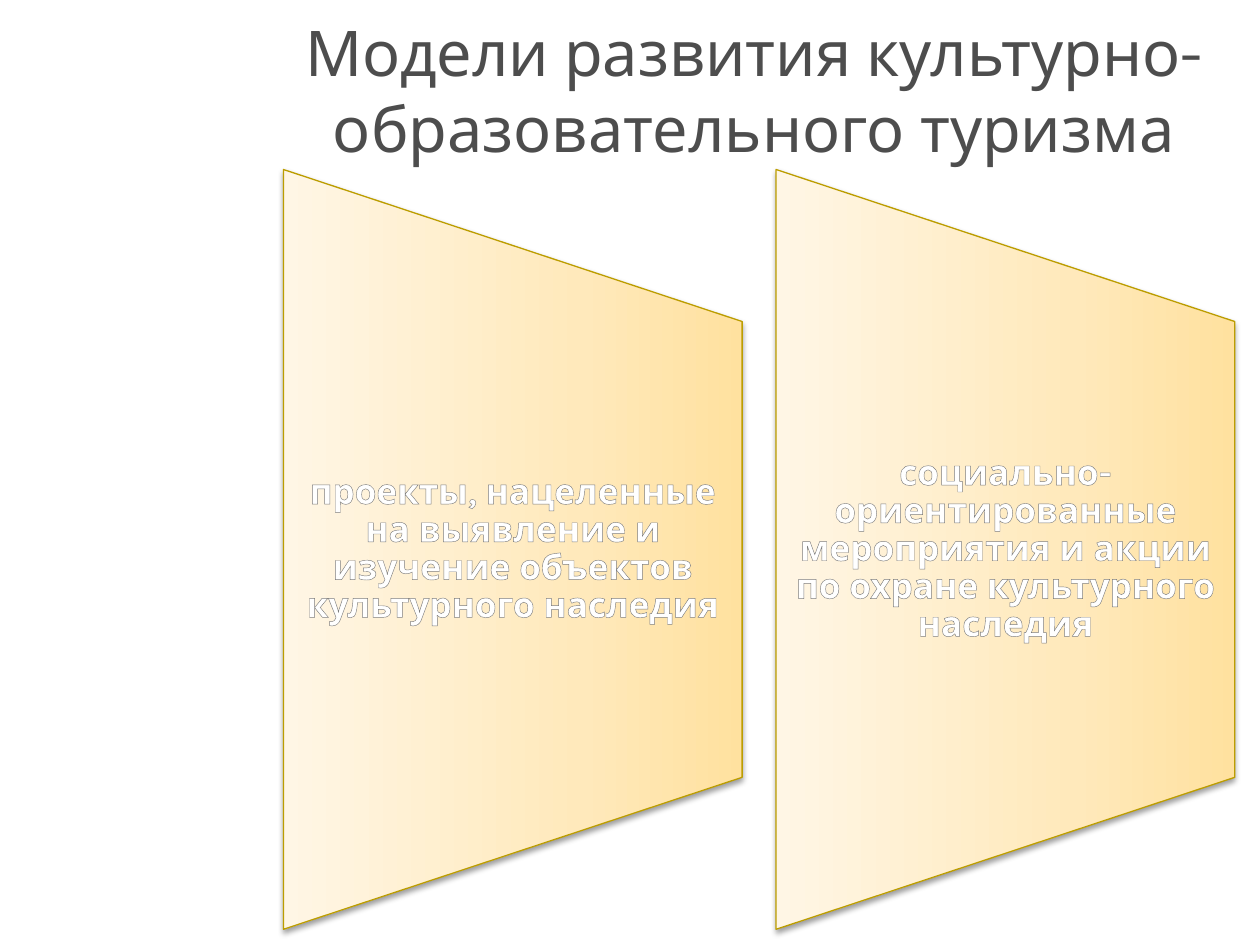
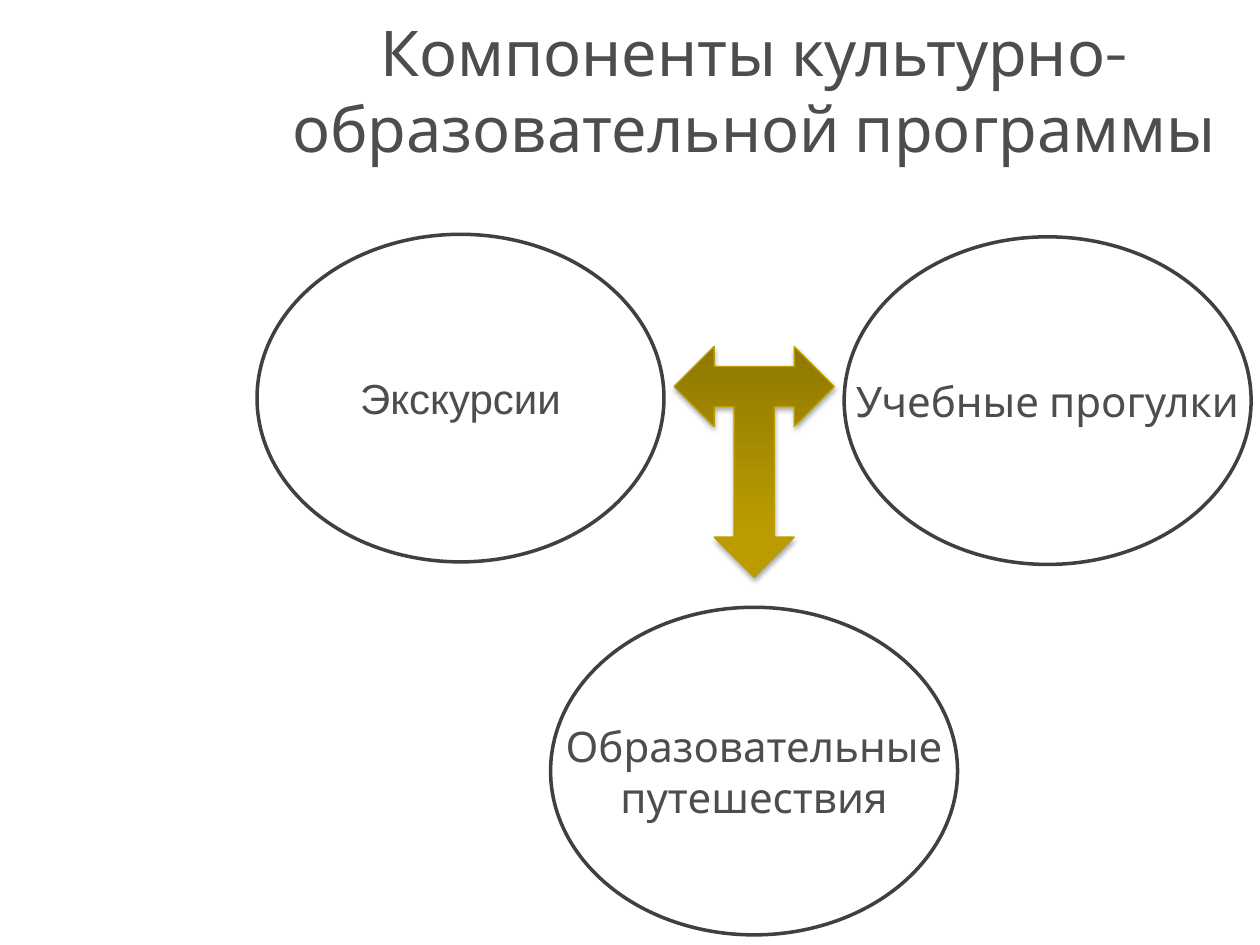
from dataclasses import dataclass
from typing import NamedTuple

from pptx import Presentation
from pptx.dml.color import RGBColor
from pptx.enum.shapes import MSO_SHAPE as Shape
from pptx.enum.text import MSO_ANCHOR as Anchor, PP_ALIGN as Align
from pptx.oxml import parse_xml
from pptx.oxml.ns import nsdecls, qn
from pptx.util import Inches, Pt


@dataclass(frozen=True)
class Theme:
    font: str = "Karla"
    plain: str = "Arial"
    ink: str = "4D4D4D"
    ring: str = "404040"
    paper: str = "FFFFFF"
    gold: str = "BC9D00"
    edge: str = "7D7D7D"
    title: int = 36
    label: int = 24
    body: int = 20
    cream: tuple = ((0, "FFE19F"), (35, "FFE9BB"), (100, "FFF6E5"))
    ochre: tuple = ((0, "8F7800"), (80, "BA9B00"), (100, "BB9C00"))
    shine: tuple = ((0, "FFFFFF"), (9, "FFFFFF"), (50, "7F7F7F"),
                    (79, "FFFFFF"), (100, "FFFFFF"))


class Box(NamedTuple):
    left: float
    top: float
    width: float
    height: float

    def place(self) -> list:
        return [Inches(side) for side in self]


class Panel(NamedTuple):
    left: float
    text: str


class Oval(NamedTuple):
    left: float
    top: float
    lines: tuple
    font: str


THEME = Theme()
HEAD = Box(2.05, 0.08, 7.87, 1.26)
PANELS = (
    Panel(2.25, "проекты, нацеленные на выявление и изучение объектов культурного наследия"),
    Panel(6.16, "социально-ориентированные мероприятия и акции по охране культурного наследия"),
)
OVALS = (
    Oval(6.7, 1.88, ("Учебные прогулки",), THEME.font),
    Oval(2.04, 1.86, ("Экскурсии",), THEME.plain),
    Oval(4.37, 4.82, ("Образовательные", "путешествия"), THEME.font),
)


def tint(code: str) -> RGBColor:
    return RGBColor.from_string(code)


def blend(stops: tuple, angle: int):
    marks = "".join(
        f'<a:gs pos="{pos * 1000}"><a:srgbClr val="{code}"/></a:gs>'
        for pos, code in stops)
    return parse_xml(
        f'<a:gradFill {nsdecls("a")} rotWithShape="1"><a:gsLst>{marks}</a:gsLst>'
        f'<a:lin ang="{angle * 60000}" scaled="0"/></a:gradFill>')


def write(frame, lines: tuple, size: int, color: str, font: str = THEME.font) -> list:
    frame.vertical_anchor = Anchor.MIDDLE
    runs = []
    for i, line in enumerate(lines):
        para = frame.add_paragraph() if i else frame.paragraphs[0]
        para.alignment = Align.CENTER
        run = para.add_run()
        run.text = line
        run.font.size = Pt(size)
        run.font.name = font
        run.font.color.rgb = tint(color)
        runs.append(run)
    return runs


def add_text(slide, box: Box, text: str, size: int, color: str):
    frame = slide.shapes.add_textbox(*box.place()).text_frame
    frame.word_wrap = True
    return frame, write(frame, (text,), size, color)[0]


def add_form(slide, kind, box: Box, line: str, width: float):
    form = slide.shapes.add_shape(kind, *box.place())
    form.shadow.inherit = False
    form.line.color.rgb = tint(line)
    form.line.width = Pt(width)
    return form


def add_gold(slide, kind, box: Box, turn: int, stops: tuple, alpha: int, drop: float) -> None:
    form = add_form(slide, kind, box, THEME.gold, 0.75)
    form.rotation = turn
    props = form._element.spPr
    props.find(qn("a:prstGeom")).addnext(blend(stops, 270))
    props.find(qn("a:effectLst")).append(parse_xml(
        f'<a:outerShdw {nsdecls("a")} blurRad="{Pt(3.1)}" dist="{Pt(drop)}" '
        f'dir="5400000" rotWithShape="0"><a:srgbClr val="000000">'
        f'<a:alpha val="{alpha * 1000}"/></a:srgbClr></a:outerShdw>'))


def add_panel(slide, panel: Panel) -> None:
    long, short = 6.03, 3.64
    mid = panel.left + short / 2
    add_gold(slide, Shape.FLOWCHART_MANUAL_OPERATION,
             Box(mid - long / 2, 2.54, long, short), 270, THEME.cream, 38, 1.6)
    frame, run = add_text(slide, Box(panel.left, 2.55, short, 3.62),
                          panel.text, THEME.body, THEME.paper)
    frame.margin_left = frame.margin_right = Inches(0.14)
    frame.margin_top = frame.margin_bottom = 0
    frame.paragraphs[0].line_spacing = 0.9
    run.font.bold = True
    props = run.font._element
    props.replace(props.find(qn("a:solidFill")), blend(THEME.shine, 90))
    props.insert(0, parse_xml(
        f'<a:ln {nsdecls("a")} w="{Pt(0.83)}"><a:solidFill>'
        f'<a:srgbClr val="{THEME.edge}"/></a:solidFill></a:ln>'))


def add_oval(slide, oval: Oval) -> None:
    form = add_form(slide, Shape.OVAL, Box(oval.left, oval.top, 3.23, 2.6), THEME.ring, 2)
    form.fill.solid()
    form.fill.fore_color.rgb = tint(THEME.paper)
    form.text_frame.word_wrap = False
    write(form.text_frame, oval.lines, THEME.label, THEME.ink, oval.font)


def add_slide(deck, title: str):
    slide = deck.slides.add_slide(deck.slide_layouts[6])
    slide.background.fill.solid()
    slide.background.fill.fore_color.rgb = tint(THEME.paper)
    add_text(slide, HEAD, title, THEME.title, THEME.ink)
    return slide


def main() -> None:
    deck = Presentation()
    deck.slide_width, deck.slide_height = Inches(10), Inches(7.5)

    models = add_slide(deck, "Модели развития культурно-образовательного туризма")
    for panel in PANELS:
        add_panel(models, panel)

    parts = add_slide(deck, "Компоненты культурно-образовательной программы")
    for oval in OVALS:
        add_oval(parts, oval)
    add_gold(parts, Shape.LEFT_RIGHT_UP_ARROW, Box(5.35, 2.75, 1.27, 1.83),
             180, THEME.ochre, 35, 1.8)

    deck.save("out.pptx")


if __name__ == "__main__":
    main()
